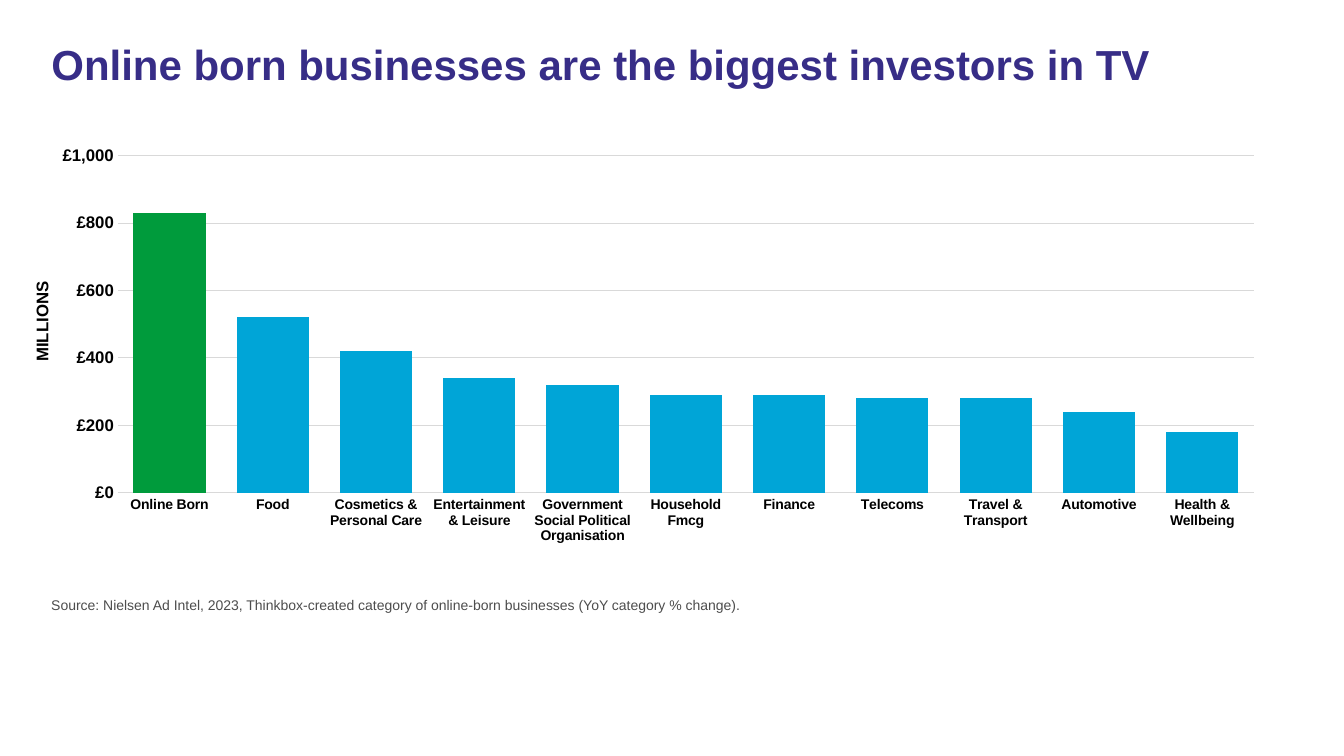
from dataclasses import dataclass
from typing import Any

import lxml.etree
import pptx
import pptx.chart.data
import pptx.dml.color
import pptx.enum.chart
import pptx.enum.text
import pptx.oxml
import pptx.oxml.ns
import pptx.util

Inches = pptx.util.Inches
Pt = pptx.util.Pt
RGBColor = pptx.dml.color.RGBColor
Align = pptx.enum.text.PP_ALIGN

INDIGO = RGBColor(0x37, 0x2D, 0x87)
GREY = RGBColor(0x4D, 0x4D, 0x4D)
BLACK = RGBColor(0, 0, 0)
PALE_GREY = RGBColor(0xD9, 0xD9, 0xD9)
GREEN = RGBColor(0x00, 0x9B, 0x3C)
BLUE = RGBColor(0x00, 0xA5, 0xD7)
FONT = "Arial"

SPEND = {
    "Online Born": 830,
    "Food": 520,
    "Cosmetics & Personal Care": 420,
    "Entertainment & Leisure": 340,
    "Government Social Political Organisation": 320,
    "Household Fmcg": 290,
    "Finance": 290,
    "Telecoms": 280,
    "Travel & Transport": 280,
    "Automotive": 240,
    "Health & Wellbeing": 180,
}
PLOT_AREA = {"x": 0.043, "y": 0.034, "w": 0.9, "h": 0.73}


@dataclass
class Caption:
    words: str
    bounds: tuple[float, float, float, float]
    size: int
    color: RGBColor
    bold: bool = False
    align: Any = Align.LEFT
    line_spacing: float = 1.0
    rotation: int = 0
    wrap: bool = True


TITLE = Caption("Online born businesses are the biggest investors in TV",
                (0.41, 0.39, 12.4, 1.12), 30, INDIGO, bold=True, line_spacing=0.9)
SOURCE = Caption("Source: Nielsen Ad Intel, 2023, Thinkbox-created category of "
                 "online-born businesses (YoY category % change).",
                 (0.41, 5.87, 12.62, 0.33), 10, GREY)
UNIT = Caption("MILLIONS", (-0.15, 3.04, 1.13, 0.3), 12, BLACK, bold=True,
               align=Align.CENTER, rotation=270, wrap=False)


def apply(target: Any, values: dict[str, Any]) -> None:
    for name, value in values.items():
        setattr(target, name, value)


def set_font(font: Any, size: int, color: RGBColor, bold: bool) -> None:
    apply(font, {"name": FONT, "size": Pt(size), "bold": bold})
    font.color.rgb = color


def set_line(line: Any, color: RGBColor) -> None:
    line.color.rgb = color
    line.width = Pt(0.75)


def write_caption(box: Any, caption: Caption) -> None:
    left, top, width, height = map(Inches, caption.bounds)
    apply(box, {"left": left, "top": top, "width": width, "height": height,
                "rotation": caption.rotation})
    apply(box.text_frame, {
        "word_wrap": caption.wrap,
        "auto_size": pptx.enum.text.MSO_AUTO_SIZE.NONE,
        "vertical_anchor": pptx.enum.text.MSO_ANCHOR.TOP,
    })
    para = box.text_frame.paragraphs[0]
    apply(para, {"alignment": caption.align, "line_spacing": caption.line_spacing})
    span = para.add_run()
    span.text = caption.words
    set_font(span.font, caption.size, caption.color, caption.bold)


def place_plot(chart: Any) -> None:
    plot_area = chart.plots[0]._element.getparent()
    for old in plot_area.findall(pptx.oxml.ns.qn("c:layout")):
        plot_area.remove(old)
    layout = lxml.etree.Element(pptx.oxml.ns.qn("c:layout"))
    manual = lxml.etree.SubElement(layout, pptx.oxml.ns.qn("c:manualLayout"))
    settings = {"layoutTarget": "inner", "xMode": "edge", "yMode": "edge", **PLOT_AREA}
    for name, value in settings.items():
        item = lxml.etree.SubElement(manual, pptx.oxml.ns.qn(f"c:{name}"))
        item.set("val", str(value))
    plot_area.insert(0, layout)


def add_spend_chart(page: Any) -> None:
    data = pptx.chart.data.CategoryChartData()
    data.categories = list(SPEND)
    data.add_series("Series 1", list(SPEND.values()))
    chart = page.shapes.add_chart(
        pptx.enum.chart.XL_CHART_TYPE.COLUMN_CLUSTERED,
        Inches(0.62), Inches(1.39), Inches(12.53), Inches(4.58), data).chart
    apply(chart, {"has_legend": False, "has_title": False})
    set_font(chart.font, 10, BLACK, False)

    plot = chart.plots[0]
    apply(plot, {"gap_width": 43, "overlap": -27, "vary_by_categories": False})
    series = plot.series[0]
    for filled, color in ((series, BLUE), (series.points[0], GREEN)):
        filled.format.fill.solid()
        filled.format.fill.fore_color.rgb = color

    no_tick = pptx.enum.chart.XL_TICK_MARK.NONE
    for axis, size in ((chart.category_axis, 10), (chart.value_axis, 12)):
        apply(axis, {"major_tick_mark": no_tick, "minor_tick_mark": no_tick})
        set_font(axis.tick_labels.font, size, BLACK, True)
    set_line(chart.category_axis.format.line, PALE_GREY)

    values = chart.value_axis
    apply(values, {"minimum_scale": 0, "maximum_scale": 1000, "major_unit": 200,
                   "has_major_gridlines": True})
    apply(values.tick_labels, {"number_format": '"£"#,##0',
                               "number_format_is_linked": False})
    values.format.line.fill.background()
    set_line(values.major_gridlines.format.line, PALE_GREY)
    place_plot(chart)


def main() -> None:
    deck = pptx.Presentation()
    apply(deck, {"slide_width": Inches(13.33), "slide_height": Inches(7.5)})
    page = deck.slides.add_slide(deck.slide_layouts[5])
    add_spend_chart(page)
    write_caption(page.shapes.title, TITLE)
    for caption in (SOURCE, UNIT):
        box = page.shapes.add_textbox(*map(Inches, caption.bounds))
        write_caption(box, caption)
    deck.save("out.pptx")


if __name__ == "__main__":
    main()
